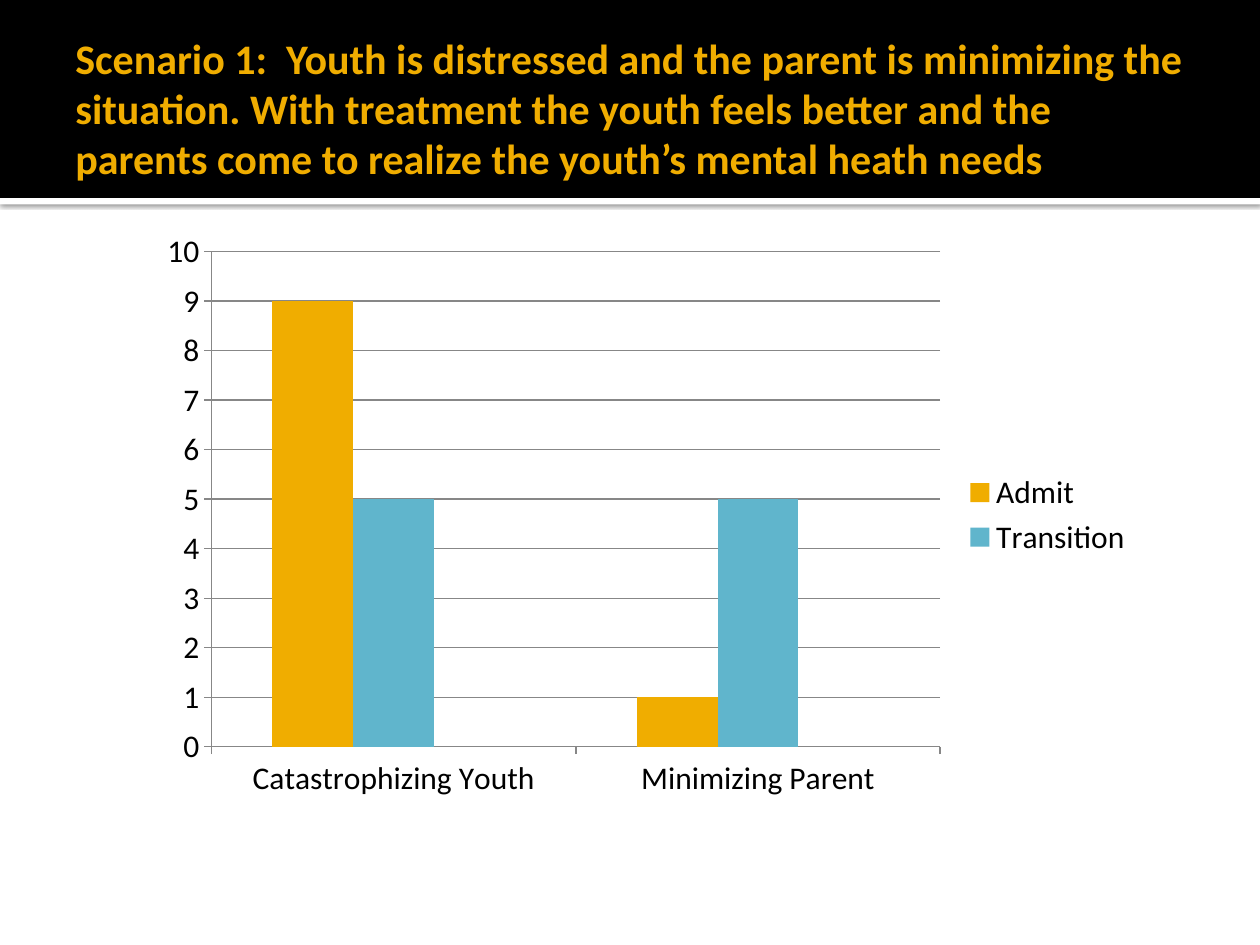
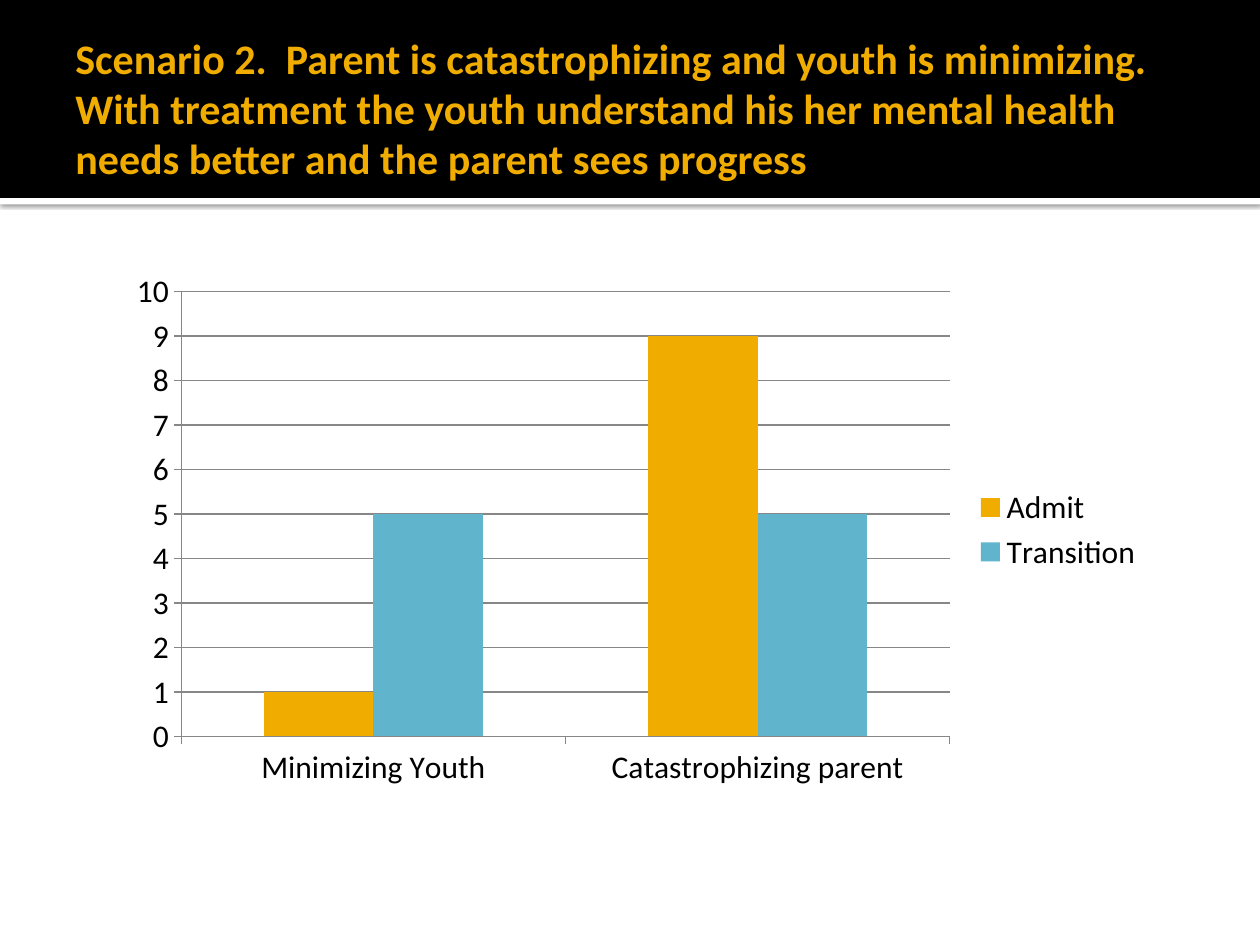
import pptx
import pptx.chart.data
import pptx.dml.color
import pptx.enum.chart
import pptx.enum.shapes
import pptx.enum.text
import pptx.oxml
import pptx.util
from pptx.util import Cm, Pt

FONT = "Calibri"
BLACK, WHITE, GOLD, GREY = "000000", "FFFFFF", "F0AD00", "878787"
SERIES_COLORS = [GOLD, "60B5CC", "E66C7D"]
SLIDE_WIDTH, BAND_HEIGHT, STRIP_HEIGHT = Cm(25.4), Cm(3.99), Cm(0.13)
DRAWING_NS = 'xmlns:a="http://schemas.openxmlformats.org/drawingml/2006/main"'
CHART_NS = 'xmlns:c="http://schemas.openxmlformats.org/drawingml/2006/chart"'
STRIP_SHADOW = (
    f'<a:effectLst {DRAWING_NS}>'
    f'<a:outerShdw blurRad="{Pt(2.5)}" dist="{Pt(0.8)}" dir="5400000" algn="tl" rotWithShape="0">'
    f'<a:srgbClr val="{BLACK}"><a:alpha val="60000"/></a:srgbClr>'
    '</a:outerShdw></a:effectLst>'
)

# The empty third series keeps its place beside the columns but not in the legend.
scenarios = [
    {
        "title": "Scenario 1:  Youth is distressed and the parent is minimizing the situation. "
                 "With treatment the youth feels better and the parents come to realize "
                 "the youth’s mental heath needs",
        "chart_box": (2.97, 4.45, 20.12, 11.86),
        "categories": ["Catastrophizing Youth", "Minimizing Parent"],
        "series": {"Admit": (9, 1), "Transition": (5, 5), "Series 3": (None, None)},
    },
    {
        "title": "Scenario 2.  Parent is catastrophizing and youth is minimizing.  "
                 "With treatment the youth understand his her mental health needs better "
                 "and the parent sees progress",
        "chart_box": (2.34, 5.28, 20.96, 10.8),
        "categories": ["Minimizing Youth", "Catastrophizing parent"],
        "series": {"Admit": (1, 9), "Transition": (5, 5)},
    },
]


def rgb(hex_color):
    return pptx.dml.color.RGBColor.from_string(hex_color)


def add_bar(slide, top, height, color):
    """Add a plain bar across the full slide width."""
    bar = slide.shapes.add_shape(
        pptx.enum.shapes.MSO_SHAPE.RECTANGLE, 0, top, SLIDE_WIDTH, height)
    bar.fill.solid()
    bar.fill.fore_color.rgb = rgb(color)
    bar.line.fill.background()
    bar.shadow.inherit = False
    return bar


presentation = pptx.Presentation()
presentation.slide_width = SLIDE_WIDTH
presentation.slide_height = Cm(19.05)

for scenario in scenarios:
    slide = presentation.slides.add_slide(presentation.slide_layouts[6])
    slide.background.fill.solid()
    slide.background.fill.fore_color.rgb = rgb(WHITE)

    # White strip with a soft shadow under the black title band
    strip_properties = add_bar(slide, BAND_HEIGHT, STRIP_HEIGHT, WHITE)._element.spPr
    strip_properties.remove(strip_properties[-1])
    strip_properties.append(pptx.oxml.parse_xml(STRIP_SHADOW))
    add_bar(slide, 0, BAND_HEIGHT, BLACK)

    title_box = slide.shapes.add_textbox(Cm(1.27), Cm(0.43), Cm(22.86), Cm(3.48))
    text_frame = title_box.text_frame
    text_frame.word_wrap = True
    text_frame.vertical_anchor = pptx.enum.text.MSO_ANCHOR.MIDDLE
    text_frame.margin_left = Cm(0.25)
    text_frame.margin_right = text_frame.margin_top = text_frame.margin_bottom = Cm(0.13)
    text_frame.text = scenario["title"]
    title_font = text_frame.paragraphs[0].runs[0].font
    title_font.name = FONT
    title_font.size = Pt(24)
    title_font.bold = True
    title_font.color.rgb = rgb(GOLD)

    chart_data = pptx.chart.data.CategoryChartData()
    chart_data.categories = scenario["categories"]
    for name, values in scenario["series"].items():
        chart_data.add_series(name, values)
    chart = slide.shapes.add_chart(
        pptx.enum.chart.XL_CHART_TYPE.COLUMN_CLUSTERED,
        *map(Cm, scenario["chart_box"]), chart_data).chart
    chart.has_title = False
    chart.font.name = FONT
    chart.font.size = Pt(18)
    chart.font.color.rgb = rgb(BLACK)

    plot = chart.plots[0]
    plot.gap_width = 150
    plot.vary_by_categories = False
    for series, color in zip(plot.series, SERIES_COLORS):
        series.format.fill.solid()
        series.format.fill.fore_color.rgb = rgb(color)

    value_axis = chart.value_axis
    value_axis.minimum_scale = 0
    value_axis.maximum_scale = 10
    value_axis.major_unit = 1
    value_axis.has_major_gridlines = True
    for axis in (chart.category_axis, value_axis):
        axis.major_tick_mark = pptx.enum.chart.XL_TICK_MARK.OUTSIDE
    for lined in (chart.category_axis, value_axis, value_axis.major_gridlines):
        lined.format.line.color.rgb = rgb(GREY)
        lined.format.line.width = Pt(0.75)

    chart.has_legend = True
    chart.legend.position = pptx.enum.chart.XL_LEGEND_POSITION.RIGHT
    chart.legend.include_in_layout = False
    for index, values in enumerate(scenario["series"].values()):
        if values == (None, None):
            chart.legend._element.insert(1, pptx.oxml.parse_xml(
                f'<c:legendEntry {CHART_NS}><c:idx val="{index}"/>'
                '<c:delete val="1"/></c:legendEntry>'))

presentation.save("out.pptx")
